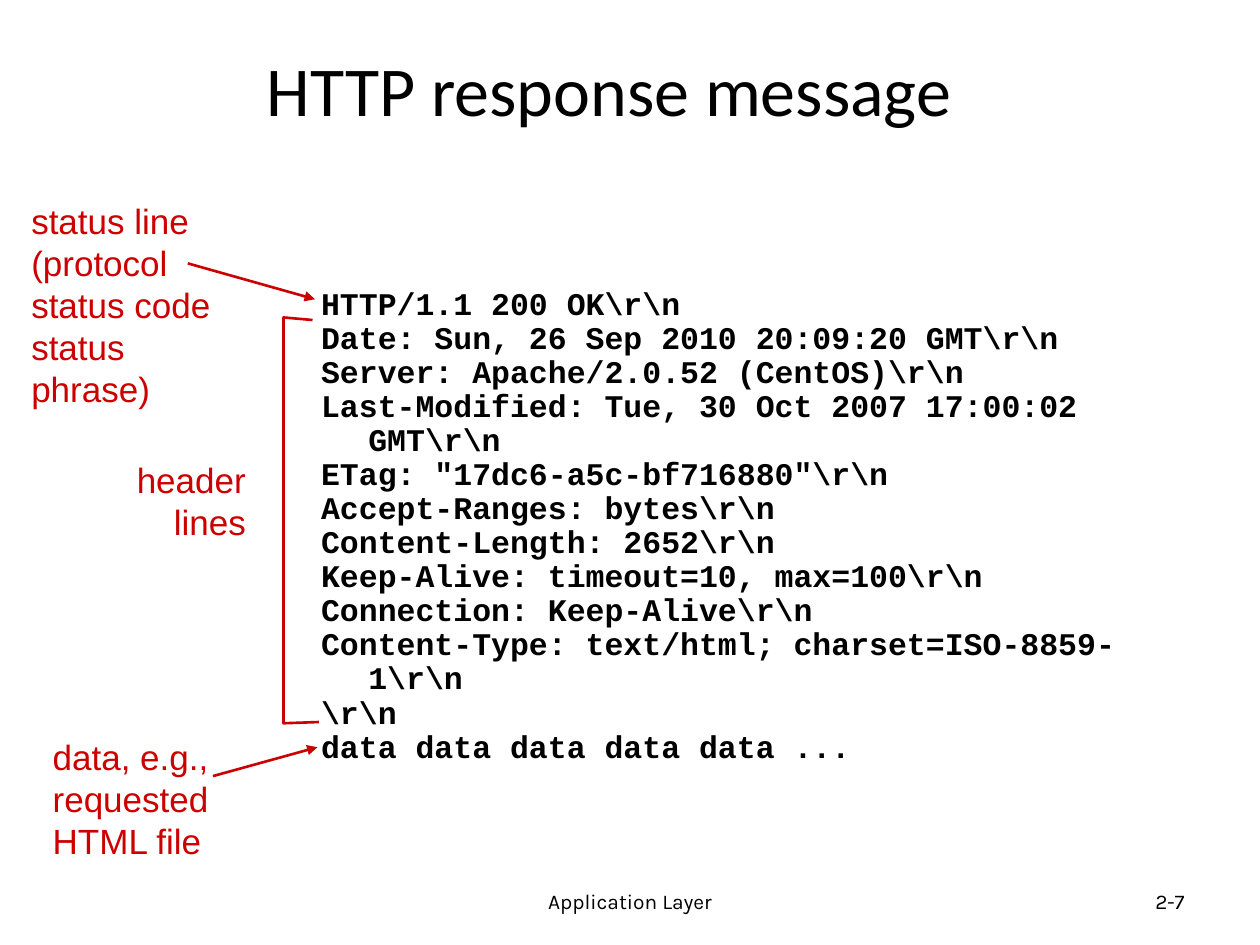
from dataclasses import dataclass

from lxml.etree import SubElement
from pptx import Presentation
from pptx.dml.color import RGBColor
from pptx.enum.shapes import MSO_CONNECTOR
from pptx.enum.text import MSO_ANCHOR, MSO_AUTO_SIZE, PP_ALIGN
from pptx.oxml.ns import qn
from pptx.util import Pt


@dataclass(frozen=True)
class TextStyle:
    font: str
    size: float
    color: RGBColor
    bold: bool = False


@dataclass(frozen=True)
class Theme:
    black = RGBColor(0, 0, 0)
    red = RGBColor(0xCC, 0, 0)
    line_width = 1.5
    title = TextStyle("Calibri", 40, black)
    label = TextStyle("Arial", 20, red)
    code = TextStyle("Courier New", 18, black, True)
    footer = TextStyle("Karla", 12, black)


class SlideBuilder:
    def __init__(self, slide, theme):
        self.slide = slide
        self.theme = theme

    def fill_text(self, frame, lines, style, align, hanging=0, spacing=None):
        for index, line in enumerate(lines):
            paragraph = frame.add_paragraph() if index else frame.paragraphs[0]
            paragraph.alignment = align
            if hanging:
                properties = paragraph._p.get_or_add_pPr()
                properties.set("marL", str(Pt(hanging)))
                properties.set("indent", str(-Pt(hanging)))
            if spacing:
                paragraph.line_spacing = spacing
            run = paragraph.add_run()
            run.text = line
            run.font.name = style.font
            run.font.size = Pt(style.size)
            run.font.bold = style.bold
            run.font.color.rgb = style.color

    def title(self, box, text):
        shape = self.slide.shapes.title
        shape.left, shape.top, shape.width, shape.height = map(Pt, box)
        shape.text_frame.vertical_anchor = MSO_ANCHOR.MIDDLE
        self.fill_text(shape.text_frame, [text], self.theme.title, PP_ALIGN.CENTER)

    def text_box(self, box, lines, style, align=PP_ALIGN.LEFT, **layout):
        frame = self.slide.shapes.add_textbox(*map(Pt, box)).text_frame
        frame.word_wrap = True
        frame.auto_size = MSO_AUTO_SIZE.SHAPE_TO_FIT_TEXT
        self.fill_text(frame, lines, style, align, **layout)
        return frame

    def label(self, box, lines, align=PP_ALIGN.LEFT):
        self.text_box(box, lines, self.theme.label, align)

    def code(self, box, lines):
        self.text_box(box, lines, self.theme.code, hanging=27, spacing=0.9)

    def footer(self, box, text, align):
        frame = self.text_box(box, [text], self.theme.footer, align)
        frame.auto_size = MSO_AUTO_SIZE.NONE
        frame.vertical_anchor = MSO_ANCHOR.MIDDLE

    def style_line(self, line):
        line.color.rgb = self.theme.red
        line.width = Pt(self.theme.line_width)

    def arrow(self, start, end):
        connector = self.slide.shapes.add_connector(
            MSO_CONNECTOR.STRAIGHT, *map(Pt, start + end)
        )
        self.style_line(connector.line)
        SubElement(connector.line._get_or_add_ln(), qn("a:tailEnd"), type="triangle")
        SubElement(connector._element.spPr, qn("a:effectLst"))

    def bracket(self, points):
        start, *rest = [tuple(map(Pt, point)) for point in points]
        builder = self.slide.shapes.build_freeform(*start)
        builder.add_line_segments(rest, close=False)
        shape = builder.convert_to_shape()
        shape.shadow.inherit = False
        shape.fill.background()
        self.style_line(shape.line)


RESPONSE = [
    r"HTTP/1.1 200 OK\r\n",
    r"Date: Sun, 26 Sep 2010 20:09:20 GMT\r\n",
    r"Server: Apache/2.0.52 (CentOS)\r\n",
    r"Last-Modified: Tue, 30 Oct 2007 17:00:02 GMT\r\n",
    r'ETag: "17dc6-a5c-bf716880"\r\n',
    r"Accept-Ranges: bytes\r\n",
    r"Content-Length: 2652\r\n",
    r"Keep-Alive: timeout=10, max=100\r\n",
    r"Connection: Keep-Alive\r\n",
    r"Content-Type: text/html; charset=ISO-8859-1\r\n",
    r"\r\n",
    "data data data data data ...",
]


def main():
    presentation = Presentation()
    presentation.slide_width, presentation.slide_height = Pt(720), Pt(540)
    slide = presentation.slides.add_slide(presentation.slide_layouts[5])
    builder = SlideBuilder(slide, Theme())

    builder.footer((246, 500.4, 228, 28.8), "Application Layer", PP_ALIGN.CENTER)
    builder.footer((516, 500.4, 168, 28.8), "2-7", PP_ALIGN.RIGHT)
    builder.title((42, 12, 612, 77), "HTTP response message")

    builder.label(
        (10.8, 110.2, 141, 103),
        ["status line", "(protocol", "status code", "status phrase)"],
    )
    builder.arrow((107.3, 150.5), (180, 171))
    builder.bracket([(178.6, 182.9), (162, 181.4), (162, 413.3), (182.2, 412.6)])
    builder.label((69, 258.5, 78.6, 55.4), ["header", "lines"], PP_ALIGN.RIGHT)
    builder.arrow((121.7, 443.5), (181.4, 427))
    builder.label((23, 416.9, 108.7, 79.2), ["data, e.g.,", "requested", "HTML file"])
    builder.code((176.4, 161.3, 496.8, 280), RESPONSE)

    presentation.save("out.pptx")


if __name__ == "__main__":
    main()
